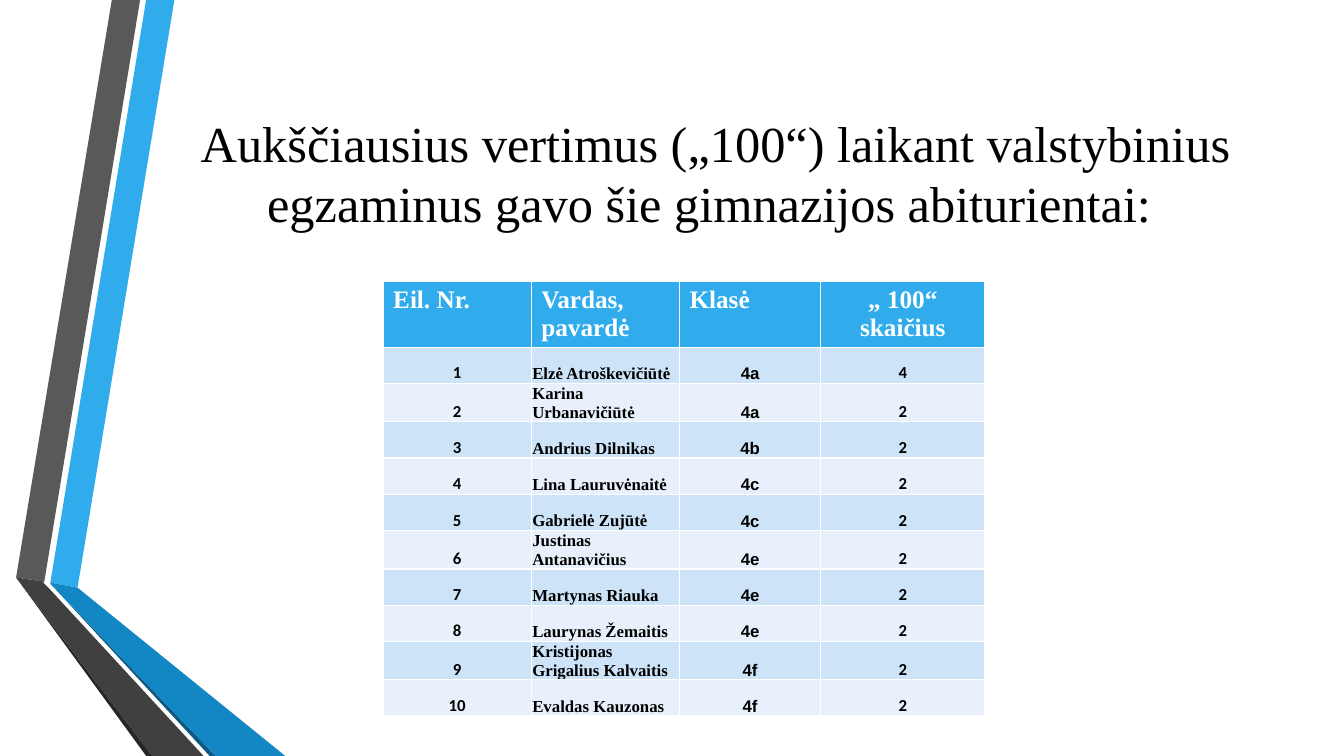
from pptx import Presentation
from pptx.dml.color import RGBColor
from pptx.enum.text import MSO_ANCHOR, MSO_AUTO_SIZE, PP_ALIGN
from pptx.util import Pt

PX = 9144
LEFT, CENTER = PP_ALIGN.LEFT, PP_ALIGN.CENTER
TOP, MIDDLE, BOTTOM = MSO_ANCHOR.TOP, MSO_ANCHOR.MIDDLE, MSO_ANCHOR.BOTTOM
NO_AUTOFIT = MSO_AUTO_SIZE.NONE
TITLE_ONLY = 5

BLACK = RGBColor(0x00, 0x00, 0x00)
WHITE = RGBColor(0xFF, 0xFF, 0xFF)
SKY = RGBColor(0x30, 0xAC, 0xEC)
BLUE = RGBColor(0x12, 0x87, 0xC3)
NAVY = RGBColor(0x0C, 0x5A, 0x82)
GRAY = RGBColor(0x59, 0x59, 0x59)
CHARCOAL = RGBColor(0x40, 0x40, 0x40)
SOOT = RGBColor(0x26, 0x26, 0x26)
BAND_DARK = RGBColor(0xCD, 0xE3, 0xF8)
BAND_LIGHT = RGBColor(0xE8, 0xF1, 0xFB)

SERIF, SANS, NUMERAL = "Times New Roman", "Arial", "Calibri"

RIBBONS = [
    (SKY, [(34, 578), (61, 583), (157, 0), (129, 0)]),
    (GRAY, [(123, 0), (95, 0), (0, 573), (28, 577)]),
    (SOOT, [(0, 573), (129, 750), (135, 750)]),
    (NAVY, [(34, 579), (192, 750), (198, 750)]),
    (BLUE, [(34, 578), (34, 579), (198, 750), (267, 750), (61, 583)]),
    (CHARCOAL, [(186, 750), (32, 583), (27, 578), (28, 577), (0, 573), (135, 750)]),
]

TITLE = "Aukščiausius vertimus („100“) laikant valstybinius egzaminus gavo šie gimnazijos abiturientai: "
HEADINGS = ["Eil. Nr.", "Vardas, pavardė", "Klasė", "„ 100“ skaičius"]
HEADING_ALIGNS = [LEFT, LEFT, LEFT, CENTER]
GRADUATES = [
    ("Elzė Atroškevičiūtė", "4a", 4),
    ("Karina Urbanavičiūtė", "4a", 2),
    ("Andrius Dilnikas", "4b", 2),
    ("Lina Lauruvėnaitė", "4c", 2),
    ("Gabrielė Zujūtė", "4c", 2),
    ("Justinas Antanavičius", "4e", 2),
    ("Martynas Riauka", "4e", 2),
    ("Laurynas Žemaitis", "4e", 2),
    ("Kristijonas Grigalius Kalvaitis", "4f", 2),
    ("Evaldas Kauzonas", "4f", 2),
]
BODY_FORMATS = [(NUMERAL, CENTER), (SERIF, LEFT), (SANS, CENTER), (NUMERAL, CENTER)]
COLUMN_WIDTHS = [147, 147, 140, 163]
HEADING_HEIGHT, ROW_HEIGHT = 63, 36


def write_text(frame, text, *, size, font, color=BLACK, bold=False, align=LEFT):
    """Write one formatted paragraph into a text frame."""
    para = frame.paragraphs[0]
    para.alignment = align
    span = para.add_run()
    span.text = text
    span.font.size = Pt(size)
    span.font.name = font
    span.font.bold = bold
    span.font.color.rgb = color


def draw_ribbons(page, left, top):
    """Draw the folded ribbons from the given corner."""
    for color, points in RIBBONS:
        corners = [(left + x, top + y) for x, y in points]
        builder = page.shapes.build_freeform(*corners[0], scale=PX)
        builder.add_line_segments(corners[1:], close=True)
        ribbon = builder.convert_to_shape()
        ribbon.shadow.inherit = False
        ribbon.fill.solid()
        ribbon.fill.fore_color.rgb = color
        ribbon.line.fill.background()


def place_title(page, left, top, width, height):
    """Move and fill the title placeholder."""
    title = page.shapes.title
    title.left, title.top = left * PX, top * PX
    title.width, title.height = width * PX, height * PX
    frame = title.text_frame
    frame.word_wrap = True
    frame.auto_size = NO_AUTOFIT
    frame.vertical_anchor = MIDDLE
    write_text(frame, TITLE, size=36, font=SERIF, align=CENTER)


def fill_cell(cell, text, fill, anchor, **text_format):
    """Colour a table cell and write its text."""
    cell.fill.solid()
    cell.fill.fore_color.rgb = fill
    cell.vertical_anchor = anchor
    write_text(cell.text_frame, text, bold=True, **text_format)


def add_results(page, left, top):
    """Add the table of graduates at the given corner."""
    height = HEADING_HEIGHT + ROW_HEIGHT * len(GRADUATES)
    table = page.shapes.add_table(
        len(GRADUATES) + 1, len(HEADINGS),
        left * PX, top * PX, sum(COLUMN_WIDTHS) * PX, height * PX,
    ).table
    for column, width in zip(table.columns, COLUMN_WIDTHS):
        column.width = width * PX
    for row in table.rows:
        row.height = ROW_HEIGHT * PX
    table.rows[0].height = HEADING_HEIGHT * PX

    for index, (heading, align) in enumerate(zip(HEADINGS, HEADING_ALIGNS)):
        fill_cell(table.cell(0, index), heading, SKY, TOP,
                  size=18, font=SERIF, color=WHITE, align=align)
    for number, graduate in enumerate(GRADUATES, start=1):
        band = BAND_DARK if number % 2 else BAND_LIGHT
        for index, value in enumerate((number, *graduate)):
            font, align = BODY_FORMATS[index]
            cell = table.cell(number, index)
            cell.margin_left = cell.margin_right = cell.margin_top = PX
            cell.margin_bottom = 0
            fill_cell(cell, str(value), band, BOTTOM, size=12, font=font, align=align)


def main():
    """Build the slide and save the deck."""
    deck = Presentation()
    deck.slide_width, deck.slide_height = 1333 * PX, 750 * PX
    page = deck.slides.add_slide(deck.slide_layouts[TITLE_ONLY])
    draw_ribbons(page, 16, 0)
    place_title(page, 162, 75, 1096, 192)
    add_results(page, 380, 279)
    deck.save("out.pptx")


if __name__ == "__main__":
    main()
